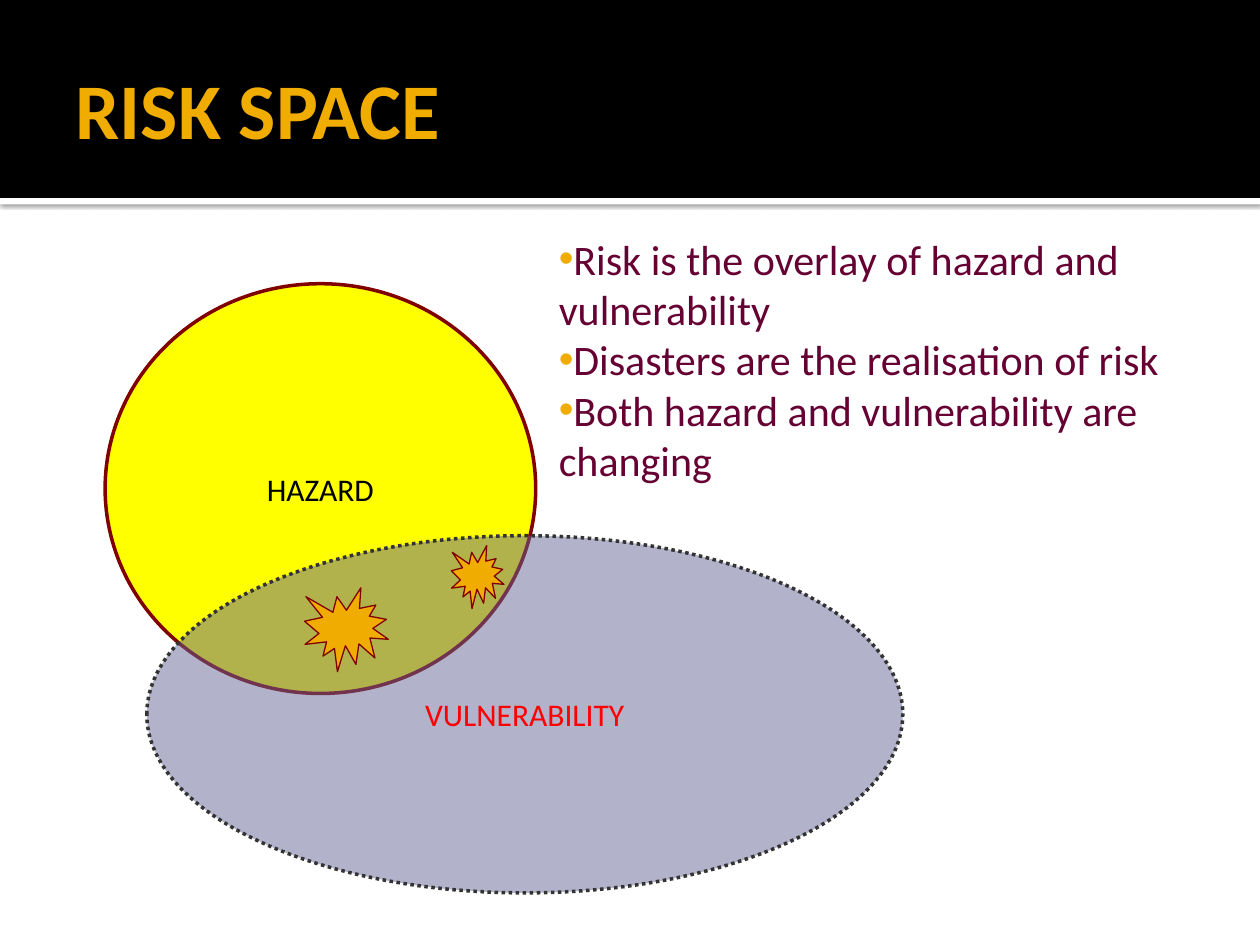
from lxml.etree import SubElement
from pptx import Presentation
from pptx.dml.color import RGBColor
from pptx.enum.dml import MSO_LINE
from pptx.enum.shapes import MSO_SHAPE
from pptx.enum.text import MSO_ANCHOR, MSO_AUTO_SIZE, PP_ALIGN
from pptx.oxml.ns import qn
from pptx.util import Cm, Pt

COLORS = {
    "black": "000000",
    "white": "FFFFFF",
    "gold": "F0AD00",
    "yellow": "FFFF00",
    "maroon": "800000",
    "lilac": "666699",
    "charcoal": "333333",
    "red": "FF0000",
    "plum": "660033",
}


def color(name):
    return RGBColor.from_string(COLORS[name])


def add_element(parent, tag, **attributes):
    return SubElement(parent, qn(tag), attributes)


class SlideBuilder:
    font_name = "Calibri"

    def __init__(self, slide):
        self.slide = slide

    def place(self, shape, box):
        for name, value in zip(("left", "top", "width", "height"), box):
            setattr(shape, name, Cm(value))

    def format_paragraph(self, paragraph, size, color_name, alignment, bold=False):
        paragraph.alignment = alignment
        font_values = {"name": self.font_name, "size": Pt(size), "bold": bold}
        for name, value in font_values.items():
            setattr(paragraph.font, name, value)
        paragraph.font.color.rgb = color(color_name)

    def shape(self, kind, box, fill, line=None, width=1, dash=None):
        shape = self.slide.shapes.add_shape(kind, *map(Cm, box))
        shape.shadow.inherit = False
        shape.fill.solid()
        shape.fill.fore_color.rgb = color(fill)
        if line is None:
            shape.line.fill.background()
        else:
            shape.line.color.rgb = color(line)
            shape.line.width = Pt(width)
            shape.line.dash_style = dash
        return shape

    def label(self, shape, text, color_name):
        shape.text_frame.word_wrap = False
        paragraph = shape.text_frame.paragraphs[0]
        paragraph.text = text
        self.format_paragraph(paragraph, 18, color_name, PP_ALIGN.CENTER)

    def translucent(self, shape, percent):
        fill_color = shape.fill._xPr.find(qn("a:solidFill"))[0]
        add_element(fill_color, "a:alpha", val=str(percent * 1000))

    def drop_shadow(self, shape):
        effects = shape._element.spPr.find(qn("a:effectLst"))
        shadow = add_element(effects, "a:outerShdw", blurRad=str(Pt(2.5)),
                             dist=str(Pt(0.8)), dir="5400000",
                             algn="t", rotWithShape="0")
        shadow_color = add_element(shadow, "a:srgbClr", val=COLORS["black"])
        add_element(shadow_color, "a:alpha", val="60000")

    def placeholder(self, shape, box, frame_values):
        self.place(shape, box)
        self.slide.shapes._spTree.append(shape._element)
        for name, value in frame_values.items():
            setattr(shape.text_frame, name, value)
        return shape.text_frame

    def title(self, text, box):
        frame = self.placeholder(self.slide.shapes.title, box, {
            "text": text,
            "auto_size": MSO_AUTO_SIZE.NONE,
            "vertical_anchor": MSO_ANCHOR.MIDDLE,
            "margin_right": Cm(0.13),
        })
        self.format_paragraph(frame.paragraphs[0], 45, "gold", PP_ALIGN.LEFT, True)

    def bullets(self, lines, box):
        frame = self.placeholder(self.slide.placeholders[1], box, {
            "text": "\n".join(lines),
            "auto_size": MSO_AUTO_SIZE.NONE,
            "vertical_anchor": MSO_ANCHOR.TOP,
        })
        for paragraph in frame.paragraphs:
            paragraph.space_before = Pt(0)
            properties = paragraph._p.get_or_add_pPr()
            properties.set("marL", "0")
            properties.set("indent", "0")
            bullet_color = add_element(properties, "a:buClr")
            add_element(bullet_color, "a:srgbClr", val=COLORS["gold"])
            add_element(properties, "a:buFont", typeface="Arial")
            add_element(properties, "a:buChar", char="•")
            self.format_paragraph(paragraph, 24, "plum", PP_ALIGN.LEFT)


def main():
    presentation = Presentation()
    presentation.slide_width = Cm(25.4)
    presentation.slide_height = Cm(19.05)
    slide = presentation.slides.add_slide(presentation.slide_layouts[1])
    builder = SlideBuilder(slide)

    stripe = builder.shape(MSO_SHAPE.RECTANGLE, (0, 3.99, 25.4, 0.13), "white")
    builder.drop_shadow(stripe)
    builder.shape(MSO_SHAPE.RECTANGLE, (0, 0, 25.4, 3.99), "black")

    hazard = builder.shape(MSO_SHAPE.OVAL, (2.12, 5.72, 8.68, 8.26),
                           "yellow", "maroon", 2)
    builder.label(hazard, "HAZARD", "black")
    vulnerability = builder.shape(MSO_SHAPE.OVAL, (2.96, 10.8, 15.24, 7.2),
                                  "lilac", "charcoal", 2, MSO_LINE.ROUND_DOT)
    builder.translucent(vulnerability, 50)
    builder.label(vulnerability, "VULNERABILITY", "red")

    builder.title("RISK SPACE", (1.27, 0.43, 22.86, 3.48))
    for box in ((6.14, 11.85, 1.69, 1.69), (9.1, 11, 1.06, 1.27)):
        builder.shape(MSO_SHAPE.EXPLOSION1, box, "gold", "maroon", 0.75)

    builder.bullets([
        "Risk is the overlay of hazard and vulnerability",
        "Disasters are the realisation of risk",
        "Both hazard and vulnerability are changing",
    ], (11.01, 4.57, 13.34, 5.38))

    presentation.save("out.pptx")


if __name__ == "__main__":
    main()
